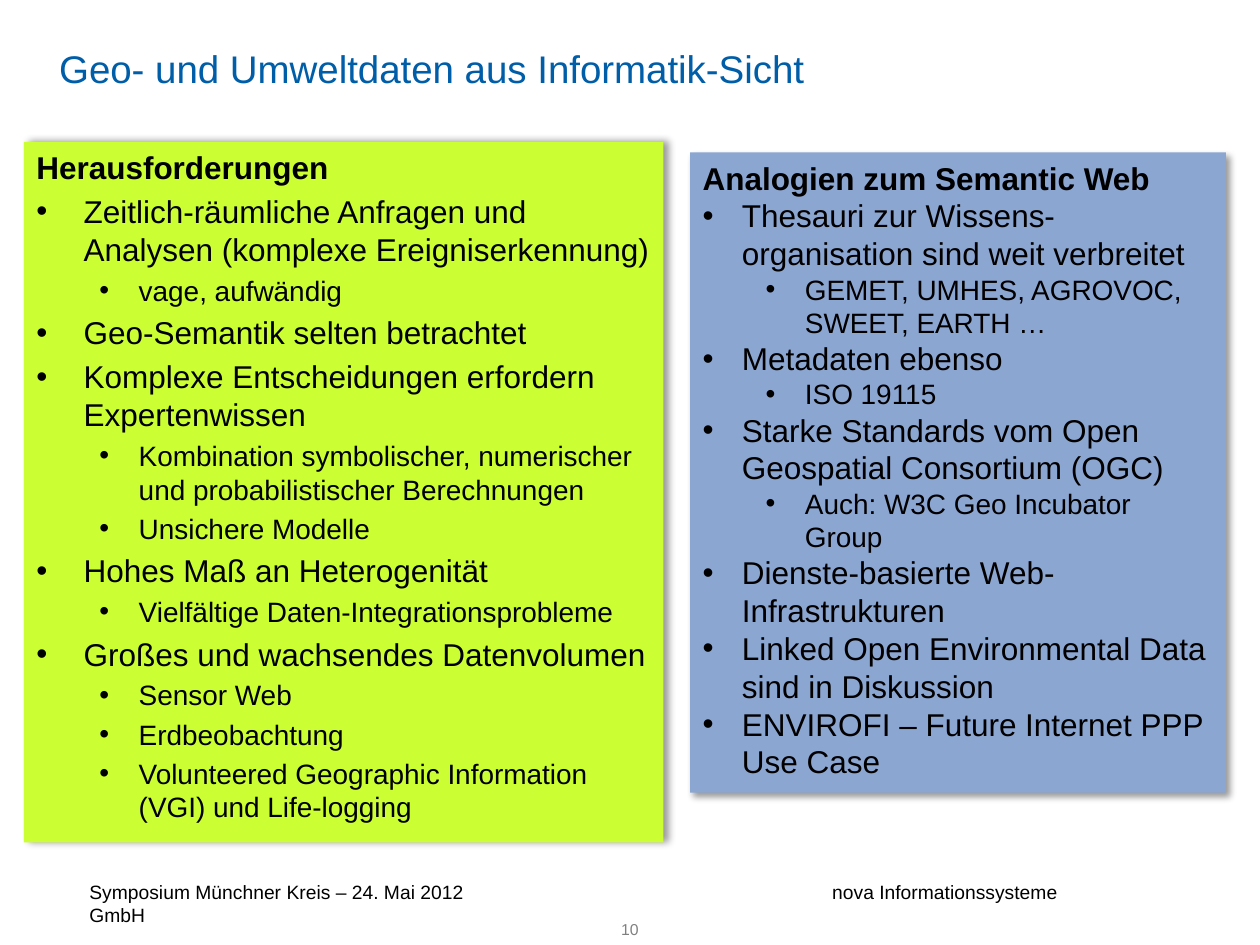
from lxml import etree
from pptx import Presentation
from pptx.dml.color import RGBColor
from pptx.enum import shapes, text
from pptx.oxml import ns
from pptx.util import Pt

BLUE = RGBColor(0x00, 0x5E, 0xA8)
LIME = RGBColor(0xCC, 0xFF, 0x33)
STEEL = RGBColor(0x8C, 0xA6, 0xD2)
GREY = RGBColor(0x80, 0x80, 0x80)
BLACK = RGBColor(0, 0, 0)

TASKS = [
    (0, "Zeitlich-räumliche Anfragen und Analysen (komplexe Ereigniserkennung)"),
    (1, "vage, aufwändig"),
    (0, "Geo-Semantik selten betrachtet"),
    (0, "Komplexe Entscheidungen erfordern Expertenwissen"),
    (1, "Kombination symbolischer, numerischer und probabilistischer Berechnungen"),
    (1, "Unsichere Modelle"),
    (0, "Hohes Maß an Heterogenität"),
    (1, "Vielfältige Daten-Integrationsprobleme"),
    (0, "Großes und wachsendes Datenvolumen"),
    (1, "Sensor Web"),
    (1, "Erdbeobachtung"),
    (1, "Volunteered Geographic Information (VGI) und Life-logging"),
]
LINKS = [
    (0, "Thesauri zur Wissens-organisation sind weit verbreitet"),
    (1, "GEMET, UMHES, AGROVOC, SWEET, EARTH …"),
    (0, "Metadaten ebenso"),
    (1, "ISO 19115"),
    (0, "Starke Standards vom Open Geospatial Consortium (OGC)"),
    (1, "Auch: W3C Geo Incubator Group"),
    (0, "Dienste-basierte Web-Infrastrukturen"),
    (0, "Linked Open Environmental Data sind in Diskussion"),
    (0, "ENVIROFI – Future Internet PPP Use Case"),
]


def add(parent, tag, **attrs):
    """Append a DrawingML element with the given attributes."""
    node = etree.SubElement(parent, ns.qn("a:" + tag))
    for key, val in attrs.items():
        node.set(key, str(val))
    return node


class Deck:
    """Hold the style and the current slide."""

    font = "Arial"
    sizes = (18, 16)

    def __init__(self):
        self.prs = Presentation()
        self.prs.slide_width, self.prs.slide_height = Pt(720), Pt(540)
        self.slide = self.prs.slides.add_slide(self.prs.slide_layouts[5])

    def style(self, para, size, color=BLACK, bold=False):
        for run in para.runs:
            run.font.name, run.font.size = self.font, Pt(size)
            run.font.color.rgb, run.font.bold = color, bold

    def title(self, words, box):
        shape = self.slide.shapes.title
        shape.left, shape.top, shape.width, shape.height = map(Pt, box)
        frame = shape.text_frame
        frame.text = words
        frame.auto_size = text.MSO_AUTO_SIZE.NONE
        frame.vertical_anchor = text.MSO_ANCHOR.MIDDLE
        frame.paragraphs[0].alignment = text.PP_ALIGN.LEFT
        self.style(frame.paragraphs[0], 22, BLUE)

    def label(self, words, box, size, color=BLACK, align=text.PP_ALIGN.LEFT, tab=None):
        frame = self.slide.shapes.add_textbox(*map(Pt, box)).text_frame
        frame.word_wrap = True
        frame.text = words
        para = frame.paragraphs[0]
        para.alignment = align
        if tab:
            stops = add(para._p.get_or_add_pPr(), "tabLst")
            add(stops, "tab", pos=Pt(tab), algn="l")
        self.style(para, size, color)

    def shade(self, shape, angle):
        glow = add(shape._element.spPr, "effectLst")
        drop = add(glow, "outerShdw", blurRad=Pt(4), dist=Pt(3),
                   dir=angle * 60000, algn="tl", rotWithShape=0)
        add(add(drop, "prstClr", val="black"), "alpha", val=40000)

    def bullet(self, para, left, hang):
        props = para._p.get_or_add_pPr()
        props.set("marL", str(Pt(left)))
        props.set("indent", str(Pt(-hang)))
        add(props, "buFont", typeface=self.font)
        add(props, "buChar", char="•")

    def panel(self, head, items, box, fill, angle, hang, gap=0):
        shape = self.slide.shapes.add_shape(shapes.MSO_SHAPE.RECTANGLE, *map(Pt, box))
        shape.fill.solid()
        shape.fill.fore_color.rgb = fill
        shape.line.fill.background()
        self.shade(shape, angle)
        frame = shape.text_frame
        frame.word_wrap = True
        frame.vertical_anchor = text.MSO_ANCHOR.TOP
        frame.text = head
        frame.paragraphs[0].alignment = text.PP_ALIGN.LEFT
        self.style(frame.paragraphs[0], self.sizes[0], bold=True)
        for level, words in items:
            para = frame.add_paragraph()
            para.text = words
            para.level = level
            para.alignment = text.PP_ALIGN.LEFT
            size = self.sizes[level]
            para.space_before = Pt(size * gap)
            self.bullet(para, *((58.5, 22.5) if level else (hang, hang)))
            self.style(para, size)


def main():
    """Build and save the slide."""
    deck = Deck()
    deck.title("Geo- und Umweltdaten aus Informatik-Sicht", (26.6, 19.4, 662.4, 39.6))
    deck.panel("Herausforderungen", TASKS, (13.7, 81.1, 365.4, 400.3), LIME, 0, 27, 0.2)
    deck.label("10", (0, 522, 720, 18), 9, GREY, text.PP_ALIGN.CENTER)
    deck.panel("Analogien zum Semantic Web", LINKS, (394.4, 87.1, 306.2, 365.8), STEEL, 45, 22.5)
    deck.label("Symposium Münchner Kreis – 24. Mai 2012\tnova Informationssysteme GmbH",
               (44, 499.7, 595.4, 21.6), 11, tab=424.5)
    deck.prs.save("out.pptx")


if __name__ == "__main__":
    main()
